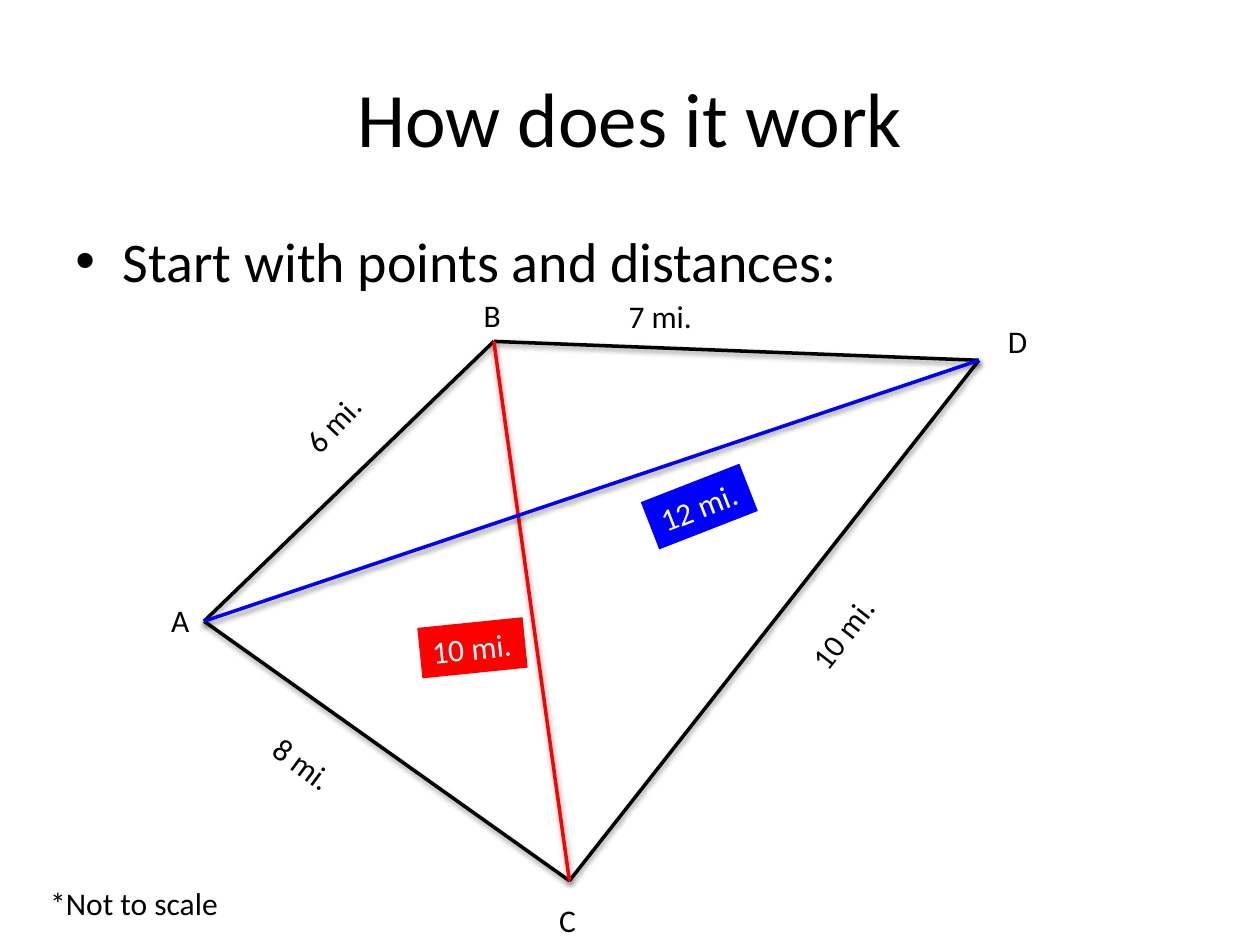
from lxml import etree
from pptx import Presentation
from pptx.dml.color import RGBColor
from pptx.enum.shapes import MSO_CONNECTOR, MSO_SHAPE
from pptx.enum.text import MSO_ANCHOR, PP_ALIGN
from pptx.oxml import parse_xml
from pptx.util import Pt

LINE, RECT = MSO_CONNECTOR.STRAIGHT, MSO_SHAPE.RECTANGLE
TOP, MID = MSO_ANCHOR.TOP, MSO_ANCHOR.MIDDLE
LEFT, CENTER = PP_ALIGN.LEFT, PP_ALIGN.CENTER
NS = "http://schemas.openxmlformats.org/drawingml/2006/main"

THEME = {
    "font": "Calibri",
    "black": RGBColor(0, 0, 0),
    "white": RGBColor(255, 255, 255),
    "red": RGBColor(255, 0, 0),
    "blue": RGBColor(0, 0, 255),
    "title": Pt(44),
    "body": Pt(32),
    "label": Pt(18),
}
SHADE = (
    f'<a:effectLst xmlns:a="{NS}"><a:outerShdw blurRad="{Pt(3.1)}" dist="{Pt(1.6)}" '
    'dir="5400000" rotWithShape="0"><a:srgbClr val="000000"><a:alpha val="38000"/>'
    "</a:srgbClr></a:outerShdw></a:effectLst>"
)

deck = Presentation()
deck.slide_width, deck.slide_height = Pt(720), Pt(540)
slide = deck.slides.add_slide(deck.slide_layouts[6])
shapes = slide.shapes


def write(shape, text, size="label", color="black", align=LEFT, anchor=TOP, wrap=True):
    frame = shape.text_frame
    frame.word_wrap, frame.vertical_anchor = wrap, anchor
    para = frame.paragraphs[0]
    para.alignment = align
    run = para.add_run()
    run.text = text
    form = {"name": THEME["font"], "size": THEME[size]}
    for key, value in form.items():
        setattr(run.font, key, value)
    run.font.color.rgb = THEME[color]
    return para


def box(left, top, wide, high):
    return shapes.add_textbox(Pt(left), Pt(top), Pt(wide), Pt(high))


write(box(36, 21.6, 648, 90), "How does it work", "title", align=CENTER, anchor=MID)

para = write(box(36, 126, 648, 356.4), "Start with points and distances:", "body")
props = para._p.get_or_add_pPr()
props.set("marL", str(Pt(27)))
props.set("indent", str(Pt(-27)))
etree.SubElement(props, f"{{{NS}}}buFont", typeface="Arial")
etree.SubElement(props, f"{{{NS}}}buChar", char="•")

write(box(21.6, 501.8, 303.8, 29), "*Not to scale")

sides = [
    ("7 mi.", 352.1, 166.3, 0),
    ("6 mi.", 163.4, 223.9, 313.6),
    ("8 mi.", 146.9, 424.8, 36.8),
    ("10 mi.", 451.4, 347, 307.9),
]
for text, left, top, turn in sides:
    label = box(left, top, 60.5, 29)
    label.rotation = turn
    write(label, text)

points = {
    "A": (116.6, 355),
    "B": (282.2, 195.1),
    "C": (325.4, 503.3),
    "D": (559.4, 205.9),
}
edges = [
    ("A", "B", "black"),
    ("A", "C", "black"),
    ("C", "D", "black"),
    ("B", "D", "black"),
    ("C", "B", "red"),
    ("D", "A", "blue"),
]
for start, end, color in edges:
    ends = [Pt(n) for n in points[start] + points[end]]
    edge = shapes.add_connector(LINE, *ends)
    edge.line.width = Pt(2)
    edge.line.color.rgb = THEME[color]
    edge._element.spPr.append(parse_xml(SHADE))

tags = [
    ("12 mi.", 369.4, 275, 338.7, "blue"),
    ("10 mi.", 239.8, 355.7, 354.2, "red"),
]
for text, left, top, turn, color in tags:
    tag = shapes.add_shape(RECT, Pt(left), Pt(top), Pt(60.5), Pt(29))
    tag.shadow.inherit = False
    tag.rotation = turn
    tag.fill.solid()
    tag.fill.fore_color.rgb = THEME[color]
    tag.line.fill.background()
    write(tag, text, color="white")

names = [
    ("D", 568.8, 180.7, 25.9),
    ("C", 312.5, 511.2, 24.5),
    ("A", 90.7, 339.8, 25.2),
    ("B", 269.3, 165.6, 24.5),
]
for text, left, top, wide in names:
    write(box(left, top, wide, 29), text, wrap=False)

deck.save("out.pptx")
